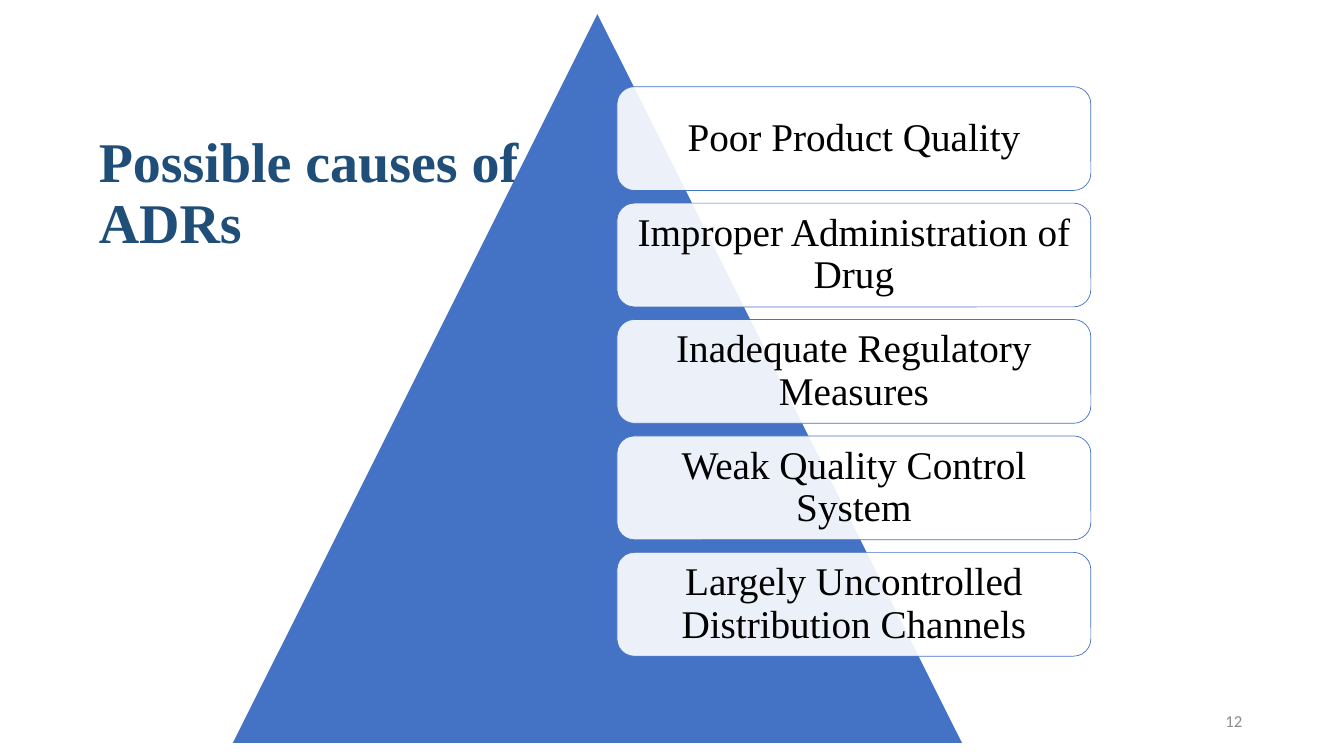
from typing import NamedTuple

from lxml.etree import SubElement
from pptx import Presentation
from pptx.dml.color import RGBColor
from pptx.enum.shapes import MSO_SHAPE as Shape
from pptx.enum.text import MSO_ANCHOR as Anchor, PP_ALIGN as Align
from pptx.oxml.ns import qn
from pptx.shapes.autoshape import Shape as AutoShape
from pptx.slide import Slide
from pptx.text.text import TextFrame
from pptx.util import Inches, Pt

WIDTH, HEIGHT = Inches(13.33), Inches(7.5)
BLUE = RGBColor(0x44, 0x72, 0xC4)
NAVY = RGBColor(0x1F, 0x4E, 0x79)
WHITE = RGBColor(0xFF, 0xFF, 0xFF)
BLACK = RGBColor(0x00, 0x00, 0x00)
GRAY = RGBColor(0x8C, 0x8C, 0x8C)
SERIF = "Times New Roman"
CARD_OPACITY = 90
CARD_PITCH = 15.4


class Area(NamedTuple):
    """A rectangle in percent of the slide's width and height."""

    left: float
    top: float
    width: float
    height: float

    def emu(self) -> tuple[int, int, int, int]:
        """Return the rectangle in EMU."""
        return (int(self.left * WIDTH / 100), int(self.top * HEIGHT / 100),
                int(self.width * WIDTH / 100), int(self.height * HEIGHT / 100))


class Style(NamedTuple):
    """The look of a paragraph."""

    font: str
    size: int
    color: RGBColor
    align: Align
    bold: bool = False
    spacing: float = 1.0


TITLE_AREA = Area(6.6, 6, 40.28, 39.6)
PYRAMID_AREA = Area(17.33, 1.87, 54.24, 96.4)
FIRST_CARD = Area(45.91, 11.47, 35.26, 13.73)
NUMBER_AREA = Area(70.67, 92.67, 22.51, 5.33)

TITLE_STYLE = Style(SERIF, 40, NAVY, Align.LEFT, bold=True, spacing=0.9)
CARD_STYLE = Style(SERIF, 28, BLACK, Align.CENTER, spacing=0.9)
NUMBER_STYLE = Style("Calibri", 12, GRAY, Align.RIGHT)

CAUSES = (
    "Poor Product Quality",
    "Improper Administration of Drug",
    "Inadequate Regulatory Measures",
    "Weak Quality Control System",
    "Largely Uncontrolled Distribution Channels",
)


def write(tf: TextFrame, text: str, style: Style) -> None:
    """Fill a text frame with one styled paragraph."""
    tf.word_wrap = True
    tf.vertical_anchor = Anchor.MIDDLE
    p = tf.paragraphs[0]
    p.text = text
    p.alignment = style.align
    p.line_spacing = style.spacing
    p.font.name = style.font
    p.font.size = Pt(style.size)
    p.font.bold = style.bold
    p.font.color.rgb = style.color


def add_filled(s: Slide, kind: Shape, area: Area, fill: RGBColor) -> AutoShape:
    """Add a flat preset shape without an outline."""
    sp = s.shapes.add_shape(kind, *area.emu())
    sp.shadow.inherit = False
    sp.fill.solid()
    sp.fill.fore_color.rgb = fill
    sp.line.fill.background()
    return sp


def add_card(s: Slide, text: str, area: Area) -> None:
    """Add a translucent rounded card naming one cause."""
    sp = add_filled(s, Shape.ROUNDED_RECTANGLE, area, WHITE)
    color = sp.element.spPr.find(qn("a:solidFill")).find(qn("a:srgbClr"))
    SubElement(color, qn("a:alpha"), val=str(CARD_OPACITY * 1000))
    sp.line.color.rgb = BLUE
    sp.line.width = Pt(0.5)
    tf = sp.text_frame
    tf.margin_left = tf.margin_right = Inches(0.12)
    tf.margin_top = tf.margin_bottom = Inches(0.12)
    write(tf, text, CARD_STYLE)


def main() -> None:
    """Build the slide and save it."""
    prs = Presentation()
    prs.slide_width, prs.slide_height = WIDTH, HEIGHT
    s = prs.slides.add_slide(prs.slide_layouts.get_by_name("Title Only"))

    title = s.shapes.title
    title.left, title.top, title.width, title.height = TITLE_AREA.emu()
    write(title.text_frame, "Possible causes of ADRs", TITLE_STYLE)

    add_filled(s, Shape.ISOSCELES_TRIANGLE, PYRAMID_AREA, BLUE)
    for i, cause in enumerate(CAUSES):
        add_card(s, cause, FIRST_CARD._replace(top=FIRST_CARD.top + i * CARD_PITCH))

    number = s.shapes.add_textbox(*NUMBER_AREA.emu())
    write(number.text_frame, "12", NUMBER_STYLE)

    prs.save("out.pptx")


if __name__ == "__main__":
    main()
